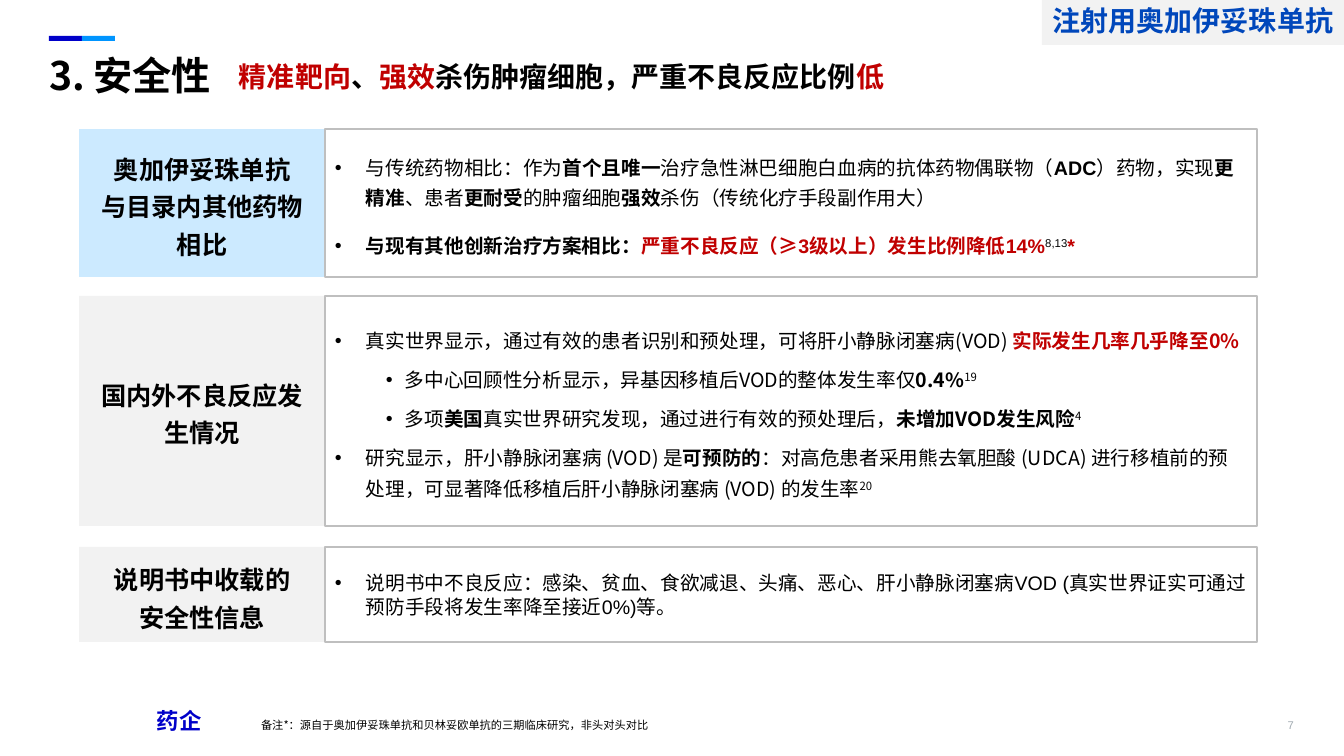
import pptx
import pptx.util
import pptx.dml.color
import pptx.enum.shapes
import pptx.enum.text
import pptx.oxml.ns
from lxml import etree

PX = 12192000 / 1344
COLORS = {
    "black": "000000", "red": "C00000", "navy": "0000C9", "sky": "0095FF",
    "blue": "0047BB", "pale_blue": "CCEAFF", "pale_gray": "F2F2F2",
    "border": "BFBFBF", "gray": "A1AAB1",
}
CJK = "Noto Sans CJK SC"
ALIGN = pptx.enum.text.PP_ALIGN
ANCHOR = pptx.enum.text.MSO_ANCHOR

# Run marks: b bold, r red, n CJK font for Latin letters, s superscript
MARKS = {"b": {"bold": True}, "r": {"color": "red"}, "n": {"name": CJK}, "s": {"sup": True}}
HEADING = {"name": CJK, "size": 18, "bold": True}
BODY = {"name": "Arial", "size": 14}
NOTE = {"name": CJK, "size": 8}
# Left margin and hanging indent of each bullet level
INDENTS = [(31, 31), (70, 19)]


def px(n):
    return pptx.util.Emu(round(n * PX))


def rgb(name):
    return pptx.dml.color.RGBColor.from_string(COLORS[name])


def add_run(p, text, fmt):
    r = p.add_run()
    r.text = text
    fmt = {"color": "black", "bold": False, **fmt}
    r.font.color.rgb = rgb(fmt.pop("color"))
    rPr = r._r.get_or_add_rPr()
    if fmt.pop("sup", False):
        rPr.set("baseline", "30000")
    fmt["size"] = pptx.util.Pt(fmt["size"])
    for key, value in fmt.items():
        setattr(r.font, key, value)
    etree.SubElement(rPr, pptx.oxml.ns.qn("a:ea"), typeface=CJK)


def add_bullet(p, level):
    p.level = level
    left, hang = INDENTS[level]
    pPr = p._p.get_or_add_pPr()
    pPr.set("marL", str(px(left)))
    pPr.set("indent", str(-px(hang)))
    etree.SubElement(pPr, pptx.oxml.ns.qn("a:buFont"), typeface="Arial")
    etree.SubElement(pPr, pptx.oxml.ns.qn("a:buChar"), char="•")


def fill_text(shape, paras, fmt, align=ALIGN.LEFT, spacing=0.9, before=0,
              anchor=ANCHOR.TOP, inset=(5, 5), bullets=False):
    """Each paragraph is (level, [(text, marks), ...])."""
    tf = shape.text_frame
    frame = {"word_wrap": True, "auto_size": pptx.enum.text.MSO_AUTO_SIZE.NONE,
             "vertical_anchor": anchor,
             "margin_left": px(inset[0]), "margin_right": px(inset[0]),
             "margin_top": px(inset[1]), "margin_bottom": px(inset[1])}
    for key, value in frame.items():
        setattr(tf, key, value)
    for i, (level, runs) in enumerate(paras):
        p = tf.add_paragraph() if i else tf.paragraphs[0]
        if bullets:
            add_bullet(p, level)
        p.alignment = align
        p.line_spacing = spacing
        p.space_before = pptx.util.Pt(before if i else 0)
        for text, marks in runs:
            run_fmt = dict(fmt)
            for mark in marks:
                run_fmt.update(MARKS[mark])
            add_run(p, text, run_fmt)


def plain(*lines):
    return [(0, [(line, "")]) for line in lines]


def add_box(s, box, fill=None, line=None):
    sp = s.shapes.add_shape(pptx.enum.shapes.MSO_SHAPE.RECTANGLE, *map(px, box))
    sp.shadow.inherit = False
    if fill:
        sp.fill.solid()
        sp.fill.fore_color.rgb = rgb(fill)
    else:
        sp.fill.background()
    if line:
        sp.line.color.rgb = rgb(line)
        sp.line.width = pptx.util.Pt(1)
    else:
        sp.line.fill.background()
    return sp


def add_label(s, box, paras, fmt, **layout):
    fill_text(s.shapes.add_textbox(*map(px, box)), paras, fmt, **layout)


def add_row(s, top, height, fill, heading, heading_spacing, body, spacing, before):
    head = add_box(s, (79, top, 246, height), fill)
    fill_text(head, plain(*heading), HEADING, ALIGN.CENTER, heading_spacing,
              anchor=ANCHOR.MIDDLE, inset=(10, 5))
    panel = add_box(s, (325, top, 932, height), line="border")
    fill_text(panel, body, BODY, spacing=spacing, before=before,
              anchor=ANCHOR.MIDDLE, inset=(10, 5), bullets=True)


ROWS = [
    (129, 148, "pale_blue", ["奥加伊妥珠单抗", "与目录内其他药物", "相比"], 1.25, [
        (0, [("与传统药物相比：作为", ""), ("首个且唯一", "b"),
             ("治疗急性淋巴细胞白血病的抗体药物偶联物（", ""), ("ADC", "b"),
             ("）药物，实现", ""), ("更精准", "b"), ("、患者", ""), ("更耐受", "b"),
             ("的肿瘤细胞", ""), ("强效", "b"), ("杀伤（传统化疗手段副作用大）", "")]),
        (0, [("与现有其他创新治疗方案相比", "bn"), ("：", "b"),
             ("严重不良反应（≥3级以上）发生比例降低14%", "br"),
             ("8,13", "s"), ("*", "br")]),
    ], 1.3, 12),
    (296, 230, "pale_gray", ["国内外不良反应发生情况"], 1.2, [
        (0, [("真实世界显示，", ""),
             ("通过有效的患者识别和预处理，可将肝小静脉闭塞病(VOD) ", "n"),
             ("实际发生几率几乎降至0%", "nbr")]),
        (1, [("多中心回顾性分析显示，异基因移植后VOD的整体发生率仅", "n"),
             ("0.4%", "nb"), ("19", "ns")]),
        (1, [("多项", "n"), ("美国", "nb"),
             ("真实世界研究发现，通过进行有效的预处理后，", "n"),
             ("未增加VOD发生风险", "nb"), ("4", "ns")]),
        (0, [("研究显示，", ""), ("肝小静脉闭塞病 (VOD) 是", "n"), ("可预防的", "nb"),
             ("：对高危患者采用熊去氧胆酸 (UDCA) 进行移植前的预处理，"
              "可显著降低移植后肝小静脉闭塞病 (VOD) 的发生率", "n"), ("20", "ns")]),
    ], 1.3, 6),
    (547, 95, "pale_gray", ["说明书中收载的", "安全性信息"], 1.25, plain(
        "说明书中不良反应：感染、贫血、食欲减退、头痛、恶心、肝小静脉闭塞病VOD "
        "(真实世界证实可通过预防手段将发生率降至接近0%)等。"), 1.0, 6),
]


def main():
    prs = pptx.Presentation()
    prs.slide_width, prs.slide_height = px(1344), px(756)
    s = prs.slides.add_slide(prs.slide_layouts[5])

    # Accent bar
    for i, color in enumerate(("navy", "sky")):
        add_box(s, (49 + 33 * i, 36, 33, 5), color)

    # Title and its message
    title = s.shapes.title
    title.left, title.top, title.width, title.height = map(px, (49, 53, 1273, 48))
    fill_text(title, plain("3. 安全性"), {"name": CJK, "size": 28, "bold": True},
              spacing=0.85, inset=(0, 5))
    message = [("精准靶向", "r"), ("、", ""), ("强效", "r"),
               ("杀伤肿瘤细胞，严重不良反应比例", ""), ("低", "r")]
    add_label(s, (234, 58, 964, 61), [(0, message)],
              {"name": CJK, "size": 20, "bold": True})

    # Drug name tag
    tag = add_box(s, (1042, 0, 302, 45), "pale_gray")
    fill_text(tag, plain("注射用奥加伊妥珠单抗"),
              {"name": CJK, "size": 20, "bold": True, "color": "blue"},
              ALIGN.CENTER, anchor=ANCHOR.MIDDLE, inset=(10, 5))

    # Safety rows
    for row in ROWS:
        add_row(s, *row)

    # Footer
    add_label(s, (152, 705, 81, 29), plain("药企"),
              {"name": CJK, "size": 16, "bold": True, "color": "navy"})
    add_label(s, (256, 715, 453, 24),
              plain("备注*：源自于奥加伊妥珠单抗和贝林妥欧单抗的三期临床研究，非头对头对比"), NOTE)
    add_label(s, (1264, 695, 30, 37), plain("7"),
              {"name": "Arial", "size": 8, "color": "gray"},
              align=ALIGN.RIGHT, anchor=ANCHOR.BOTTOM, inset=(0, 0))

    prs.save("out.pptx")


if __name__ == "__main__":
    main()
